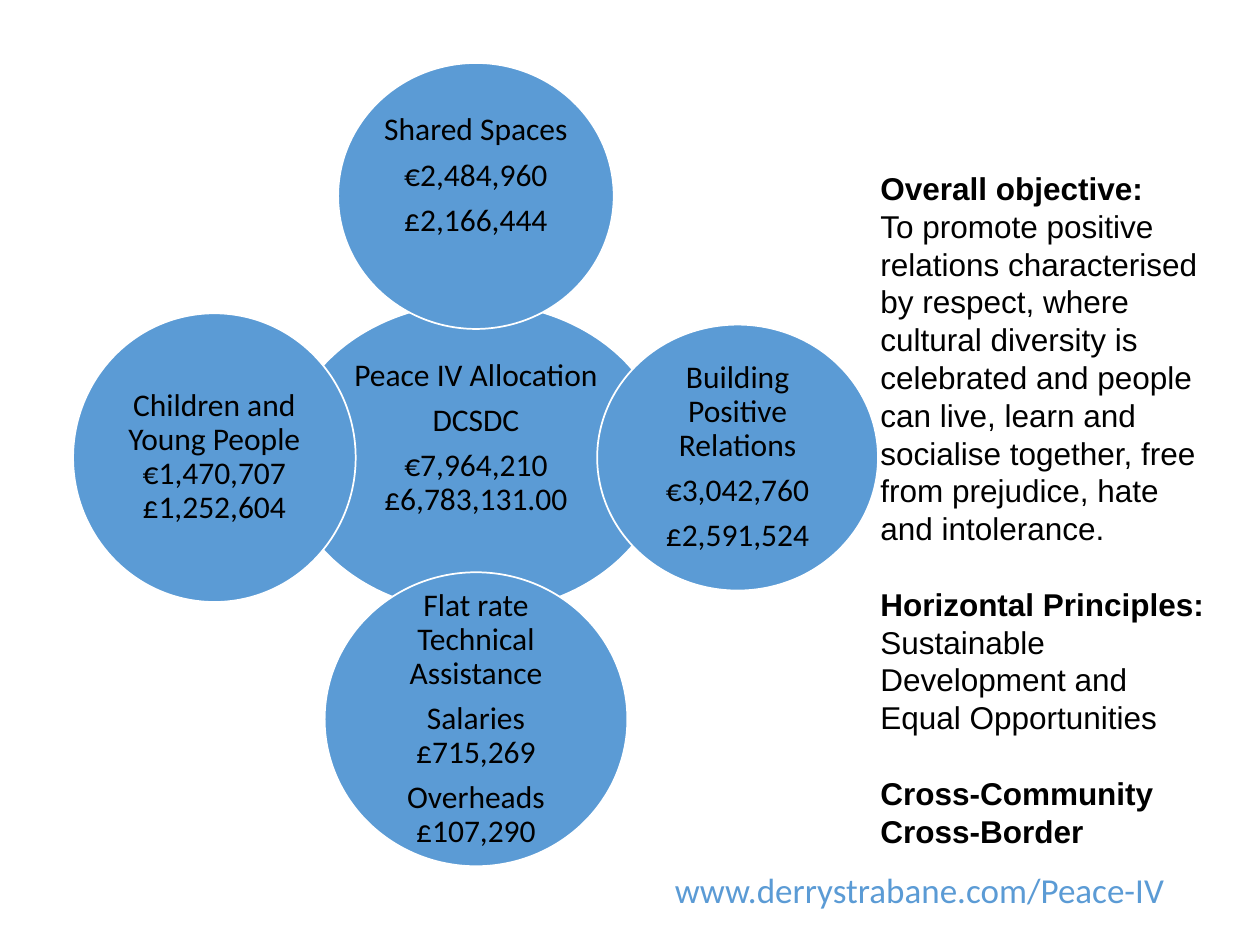
from pptx import Presentation
from pptx.dml.color import RGBColor
from pptx.enum.shapes import MSO_SHAPE
from pptx.enum.text import MSO_ANCHOR, MSO_AUTO_SIZE, PP_ALIGN
from pptx.util import Pt

COLORS = {"blue": "5B9BD5", "white": "FFFFFF", "black": "000000"}
HUB = (272, 261.5)
REACH = 149.5
RINGS = [
    (0, 0, 217.5, 177, 22,
     ["Peace IV Allocation", "DCSDC", "€7,964,210 £6,783,131.00"]),
    (0, -1, 157.5, 152, 23, ["Shared Spaces", "€2,484,960", "£2,166,444"]),
    (1, 0, 160.5, 152, 0,
     ["Building Positive Relations", "€3,042,760", "£2,591,524"]),
    (0, 1, 173, 168, 0,
     ["Flat rate Technical Assistance", "Salaries £715,269",
      "Overheads £107,290"]),
    (-1, 0, 161.5, 165, 0,
     ["Children and Young People €1,470,707 £1,252,604"]),
]
GOALS = [
    ([("Overall objective:", True)], 0),
    ([("To promote positive relations characterised by respect, where "
       "cultural diversity is celebrated and people can live, learn and "
       "socialise together, free from prejudice, hate and intolerance.",
       False)], 0),
    ([("Horizontal Principles: ", True),
      ("Sustainable Development and Equal Opportunities", False)], 21.6),
    ([("Cross-Community", True)], 21.6),
    ([("Cross-Border", True)], 0),
]


def tint(name):
    return RGBColor.from_string(COLORS[name])


def write(para, text, font="Calibri", size=18, color="black", bold=False,
          align=PP_ALIGN.LEFT, line=None, before=0, after=0):
    para.alignment = align
    para.space_before = Pt(before)
    para.space_after = Pt(after)
    if line:
        para.line_spacing = line
    run = para.add_run()
    run.text = text
    run.font.name = font
    run.font.size = Pt(size)
    run.font.bold = bold
    run.font.color.rgb = tint(color)


def paras(frame, items):
    for i, item in enumerate(items):
        yield (frame.add_paragraph() if i else frame.paragraphs[0]), item


def add_ring(slide, dx, dy, wide, high, lift, lines):
    left = HUB[0] + dx * REACH - wide / 2
    top = HUB[1] + dy * REACH - high / 2
    ring = slide.shapes.add_shape(
        MSO_SHAPE.OVAL, Pt(left), Pt(top), Pt(wide), Pt(high))
    ring.shadow.inherit = False
    ring.fill.solid()
    ring.fill.fore_color.rgb = tint("blue")
    ring.line.color.rgb = tint("white")
    ring.line.width = Pt(1)
    frame = ring.text_frame
    frame.word_wrap = True
    frame.vertical_anchor = MSO_ANCHOR.MIDDLE
    frame.margin_left = frame.margin_right = frame.margin_top = Pt(2)
    frame.margin_bottom = Pt(2 + lift)
    for para, text in paras(frame, lines):
        write(para, text, align=PP_ALIGN.CENTER, line=0.9, after=6.3)


def add_box(slide, left, top, wide, high):
    box = slide.shapes.add_textbox(Pt(left), Pt(top), Pt(wide), Pt(high))
    box.text_frame.word_wrap = True
    box.text_frame.auto_size = MSO_AUTO_SIZE.SHAPE_TO_FIT_TEXT
    return box


def add_goals(slide):
    box = add_box(slide, 496, 93, 204, 399.5)
    for para, (runs, gap) in paras(box.text_frame, GOALS):
        for text, bold in runs:
            write(para, text, font="Arial", bold=bold, before=gap)


def add_link(slide):
    box = add_box(slide, 378.5, 492.5, 325, 31.5)
    box.fill.solid()
    box.fill.fore_color.rgb = tint("white")
    write(box.text_frame.paragraphs[0], "www.derrystrabane.com/Peace-IV",
          size=20, color="blue")


def main():
    deck = Presentation()
    deck.slide_width, deck.slide_height = Pt(720), Pt(540)
    slide = deck.slides.add_slide(deck.slide_layouts[6])
    add_goals(slide)
    for ring in RINGS:
        add_ring(slide, *ring)
    add_link(slide)
    deck.save("out.pptx")


if __name__ == "__main__":
    main()
